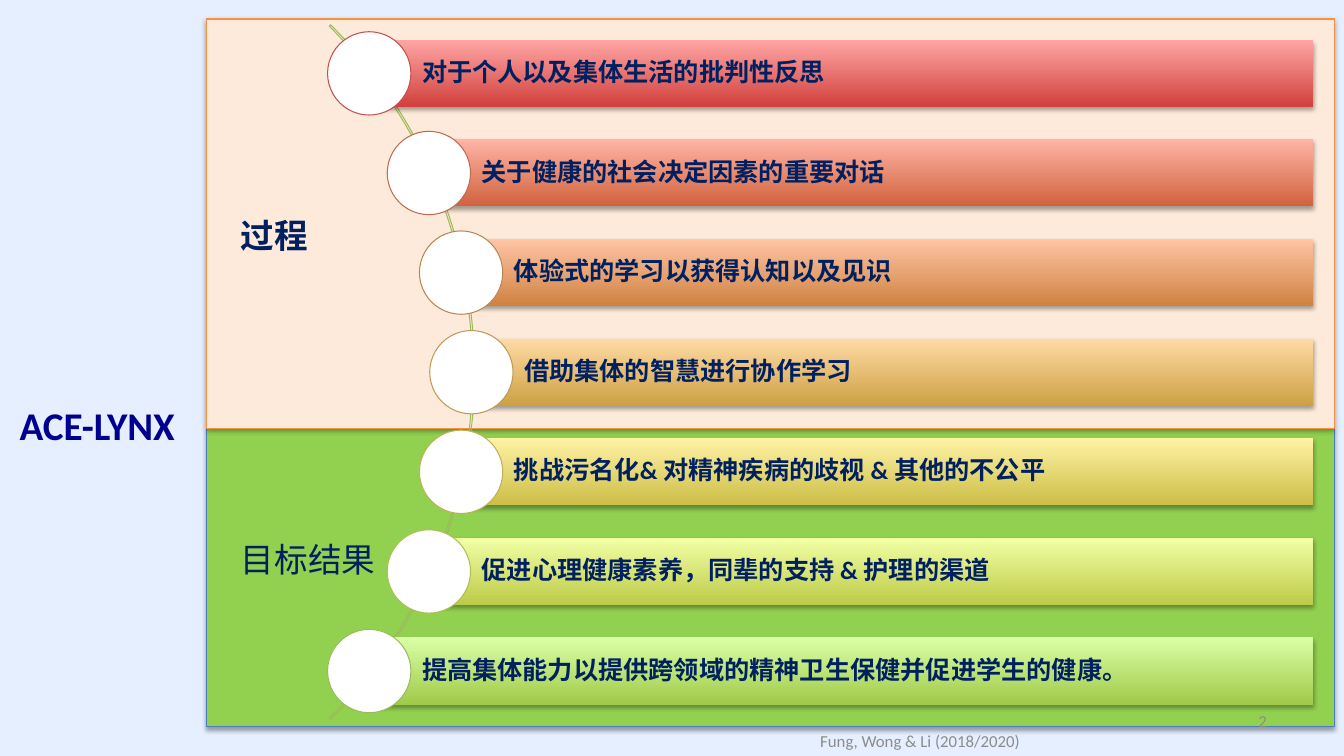
from math import sqrt

from lxml.etree import SubElement
from pptx import Presentation
from pptx.dml.color import RGBColor
from pptx.enum.shapes import MSO_SHAPE
from pptx.enum.text import MSO_ANCHOR, PP_ALIGN
from pptx.oxml.ns import qn
from pptx.util import Cm, Pt

COLORS = {
    "background": "E5EFFF",
    "process": "FDEADA", "process_line": "F69240",
    "outcome": "92D050", "outcome_line": "4B7EBC",
    "arc": "9BBB59", "circle": "FFFFFF", "shadow": "000000",
    "text": "002060", "title": "000090", "footer": "8C8C8C",
}

# text, bottom colour, top colour, circle outline
STEPS = [
    ("对于个人以及集体生活的批判性反思", "D1403C", "FFA6A5", "C0504D"),
    ("关于健康的社会决定因素的重要对话", "D0623E", "FFB4A5", "BF6A4F"),
    ("体验式的学习以获得认知以及见识", "CF8241", "FFC5A5", "BE8351"),
    ("借助集体的智慧进行协作学习", "CDA143", "FFDAA5", "BD9B53"),
    ("挑战污名化& 对精神疾病的歧视 & 其他的不公平", "CCBE46", "FFF2A5", "BDB255"),
    ("促进心理健康素养，同辈的支持 & 护理的渠道", "BDCB48", "F2FFA5", "B1BC57"),
    ("提高集体能力以提供跨领域的精神卫生保健并促进学生的健康。", "A0CA4A", "DAFFA5", "9BBB59"),
]

ARC_X, ARC_Y, ARC_R = -0.42, 9.38, 12.38
CIRCLE_TRACK_R = 12.3
PITCH, CIRCLE_D = 2.51, 2.1
BAR_H, BAR_RIGHT = 1.69, 33.09


def rgb(color):
    return RGBColor.from_string(COLORS.get(color, color))


def write(tf, text, size=18, color="text", bold=False, align=PP_ALIGN.LEFT,
          anchor=MSO_ANCHOR.MIDDLE, wrap=True, left=0.25, spacing=1.0):
    tf.word_wrap = wrap
    tf.vertical_anchor = anchor
    tf.margin_left = Cm(left)
    tf.margin_right = Cm(0.25)
    tf.margin_top = tf.margin_bottom = Cm(0.13)
    p = tf.paragraphs[0]
    p.alignment = align
    p.line_spacing = spacing
    r = p.add_run()
    r.text = text
    r.font.name = "Calibri"
    r.font.size = Pt(size)
    r.font.bold = bold
    r.font.color.rgb = rgb(color)


class SlideBuilder:
    def __init__(self, slide):
        self.slide = slide
        fill = slide.background.fill
        fill.solid()
        fill.fore_color.rgb = rgb(COLORS["background"])

    def shape(self, kind, box, fill=None, line=None, shadow=False):
        sp = self.slide.shapes.add_shape(kind, *map(Cm, box))
        sp.shadow.inherit = False
        if fill:
            sp.fill.solid()
            sp.fill.fore_color.rgb = rgb(fill)
        else:
            sp.fill.background()
        if line:
            sp.line.color.rgb = rgb(line)
            sp.line.width = Pt(0.75)
        else:
            sp.line.fill.background()
        if shadow:
            self.drop_shadow(sp)
        return sp

    def drop_shadow(self, sp):
        effects = sp.element.spPr.find(qn("a:effectLst"))
        outer = SubElement(effects, qn("a:outerShdw"), blurRad=str(Pt(3.1)),
                           dist=str(Pt(1.8)), dir="5400000", rotWithShape="0")
        color = SubElement(outer, qn("a:srgbClr"), val=COLORS["shadow"])
        SubElement(color, qn("a:alpha"), val="35000")

    def bar(self, box, text, bottom, top):
        sp = self.shape(MSO_SHAPE.RECTANGLE, box, shadow=True)
        sp.fill.gradient()
        sp.fill.gradient_angle = 90
        for stop, color in zip(sp.fill.gradient_stops, (bottom, top)):
            stop.color.rgb = rgb(color)
        write(sp.text_frame, text, bold=True, left=1.33, spacing=0.9)

    def step(self, y, text, bottom, top, outline):
        """Draw a bar with its circle centred on the arc at height y."""
        x = ARC_X + sqrt(CIRCLE_TRACK_R ** 2 - (y - ARC_Y) ** 2)
        self.bar((x, y - BAR_H / 2, BAR_RIGHT - x, BAR_H), text, bottom, top)
        box = (x - CIRCLE_D / 2, y - CIRCLE_D / 2, CIRCLE_D, CIRCLE_D)
        self.shape(MSO_SHAPE.OVAL, box, "circle", outline)

    def arc(self):
        box = (ARC_X - ARC_R, ARC_Y - ARC_R, 2 * ARC_R, 2 * ARC_R)
        sp = self.shape(MSO_SHAPE.BLOCK_ARC, box, line="arc")
        for i, value in enumerate((189, 27, 0.002)):
            sp.adjustments[i] = value

    def label(self, box, text, **fmt):
        tb = self.slide.shapes.add_textbox(*map(Cm, box))
        write(tb.text_frame, text, **fmt)

    def title(self, box, text, **fmt):
        sp = self.slide.shapes.title
        sp.left, sp.top, sp.width, sp.height = map(Cm, box)
        write(sp.text_frame, text, **fmt)


def main():
    prs = Presentation()
    prs.slide_width, prs.slide_height = Cm(33.87), Cm(19.05)
    s = SlideBuilder(prs.slides.add_slide(prs.slide_layouts[5]))

    s.title((0, 9.98, 4.9, 1.45), "ACE-LYNX", size=28, color="title",
            bold=True, align=PP_ALIGN.CENTER)
    s.shape(MSO_SHAPE.RECTANGLE, (5.21, 10.8, 28.42, 7.52),
            "outcome", "outcome_line", shadow=True)
    s.shape(MSO_SHAPE.RECTANGLE, (5.21, 0.48, 28.42, 10.32),
            "process", "process_line", shadow=True)
    s.arc()
    middle = len(STEPS) // 2
    for i, step in enumerate(STEPS):
        s.step(ARC_Y + (i - middle) * PITCH, *step)

    s.label((24.28, 17.65, 7.9, 1.02), "2", size=12, color="footer",
            align=PP_ALIGN.RIGHT)
    s.label((17.83, 18.16, 10.72, 1.02), "Fung, Wong & Li (2018/2020)",
            size=12, color="footer", align=PP_ALIGN.CENTER)
    s.label((5.82, 5.28, 2.24, 1.27), "过程", size=24, bold=True,
            anchor=MSO_ANCHOR.TOP, wrap=False)
    s.label((5.82, 13.46, 3.94, 1.27), "目标结果", size=24,
            anchor=MSO_ANCHOR.TOP, wrap=False)
    prs.save("out.pptx")


if __name__ == "__main__":
    main()
